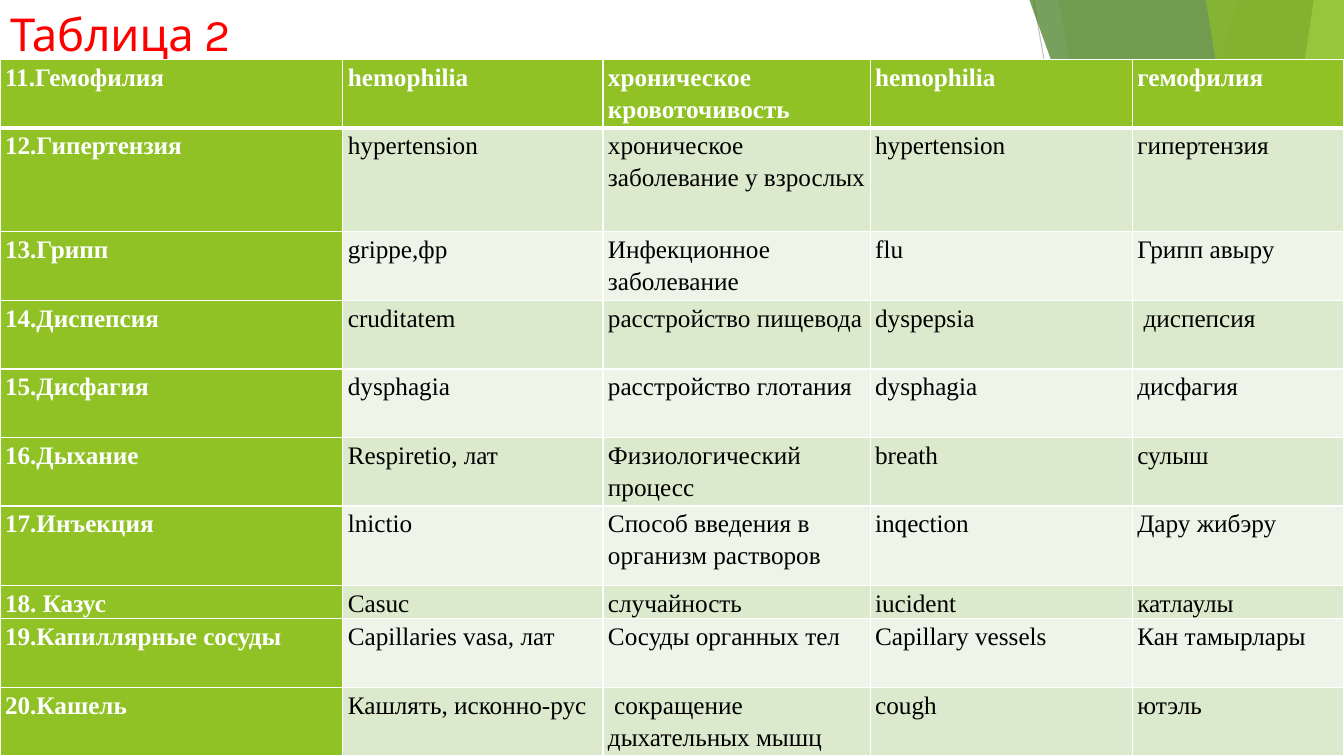
from lxml.etree import SubElement
from pptx import Presentation
from pptx.dml.color import RGBColor
from pptx.enum.shapes import MSO_CONNECTOR
from pptx.enum.text import MSO_ANCHOR, MSO_AUTO_SIZE, PP_ALIGN
from pptx.oxml.ns import qn
from pptx.util import Inches, Pt

COLORS = {
    "red": "FF0000",
    "white": "FFFFFF",
    "black": "000000",
    "line": "BFBFBF",
    "green": "90C226",
    "dark": "3F7819",
    "light": "C0E474",
    "band_odd": "DBE9CD",
    "band_even": "EEF4E8",
}
BODY_FONT = "Times New Roman"
COLUMN_WIDTHS = [3.4, 2.58, 2.65, 2.6, 2.1]
ROW_HEIGHTS = [0.68, 1.03, 0.68, 0.68, 0.68, 0.68, 0.79, 0.33, 0.68, 0.68]
TERMS = [
    ["11.Гемофилия", "hemophilia", "хроническое кровоточивость", "hemophilia", "гемофилия"],
    ["12.Гипертензия", "hypertension", "хроническое заболевание у взрослых", "hypertension", "гипертензия"],
    ["13.Грипп", "grippe,фр", "Инфекционное заболевание", "flu", "Грипп авыру"],
    ["14.Диспепсия", "cruditatem", "расстройство пищевода", "dyspepsia", " диспепсия"],
    ["15.Дисфагия", "dysphagia", "расстройство глотания", "dysphagia", "дисфагия"],
    ["16.Дыхание", "Respiretio, лат", "Физиологический процесс", "breath", "сулыш"],
    ["17.Инъекция", "lnictio", "Способ введения в организм растворов", "inqection", "Дару жибэру"],
    ["18. Казус", "Casuc", "случайность", "iucident", "катлаулы"],
    ["19.Капиллярные сосуды", "Capillaries vasa, лат", "Сосуды органных тел", "Capillary vessels", "Кан тамырлары"],
    ["20.Кашель", "Кашлять, исконно-рус", " сокращение дыхательных мышц", "cough", "ютэль"],
]
# Left edge of each facet at the top and bottom of the box, colour, opacity in percent
FACETS = [
    (2.24, 0, "green", 30),
    (0.46, 1.79, "green", 20),
    (0.17, 2.87, "dark", 70),
    (2.99, 1.88, "light", 70),
    (1.92, 3.14, "green", 65),
]


def color(name):
    return RGBColor.from_string(COLORS[name])


def add_facets(slide, left, top, width, height):
    """Translucent facets that share the right edge of the box."""
    line = slide.shapes.add_connector(
        MSO_CONNECTOR.STRAIGHT, Inches(left + 0.21), Inches(top),
        Inches(left + 1.54), Inches(top + height))
    line.line.color.rgb = color("line")
    line.line.width = Pt(0.75)
    SubElement(line._element.spPr, qn("a:effectLst"))

    right, bottom = left + width, top + height
    for top_offset, bottom_offset, fill, opacity in FACETS:
        builder = slide.shapes.build_freeform(Inches(left + top_offset), Inches(top))
        corners = [(right, top), (right, bottom), (left + bottom_offset, bottom)]
        builder.add_line_segments([(Inches(x), Inches(y)) for x, y in corners])
        facet = builder.convert_to_shape()
        facet.shadow.inherit = False
        facet.line.fill.background()
        facet.fill.solid()
        facet.fill.fore_color.rgb = color(fill)
        fill_color = facet._element.spPr.find(qn("a:solidFill"))[0]
        SubElement(fill_color, qn("a:alpha"), val=str(opacity * 1000))


def add_title(slide, left, top, width, height):
    title = slide.shapes.title
    title.left, title.top = Inches(left), Inches(top)
    title.width, title.height = Inches(width), Inches(height)
    text_frame = title.text_frame
    text_frame.text = "Таблица 2"
    text_frame.auto_size = MSO_AUTO_SIZE.NONE
    text_frame.vertical_anchor = MSO_ANCHOR.MIDDLE
    paragraph = text_frame.paragraphs[0]
    paragraph.alignment = PP_ALIGN.LEFT
    font = paragraph.runs[0].font
    font.name, font.size = "Karla", Pt(32.4)
    font.color.rgb = color("red")


def set_borders(cell, top_width, bottom_width):
    properties = cell._tc.get_or_add_tcPr()
    widths = {"a:lnL": 1, "a:lnR": 1, "a:lnT": top_width, "a:lnB": bottom_width}
    for tag, width in widths.items():
        border = SubElement(properties, qn(tag), w=str(Pt(width)))
        fill = SubElement(border, qn("a:solidFill"))
        SubElement(fill, qn("a:srgbClr"), val=COLORS["white"])


def format_cell(cell, row, column):
    is_heading = row == 0 or column == 0
    set_borders(cell, 3 if row == 1 else 1, 3 if row == 0 else 1)
    cell.fill.solid()
    band = "band_odd" if row % 2 else "band_even"
    cell.fill.fore_color.rgb = color("green" if is_heading else band)
    cell.margin_left = cell.margin_right = Inches(0.05)
    cell.margin_top = cell.margin_bottom = 0
    paragraph = cell.text_frame.paragraphs[0]
    paragraph.line_spacing = 1.15
    font = paragraph.runs[0].font
    font.name, font.size, font.bold = BODY_FONT, Pt(18), is_heading
    font.color.rgb = color("white" if is_heading else "black")


def add_terms_table(slide, left, top, width, height):
    table = slide.shapes.add_table(
        len(TERMS), len(COLUMN_WIDTHS),
        Inches(left), Inches(top), Inches(width), Inches(height)).table
    table.horz_banding = False
    for column, column_width in zip(table.columns, COLUMN_WIDTHS):
        column.width = Inches(column_width)
    for row, row_height in zip(table.rows, ROW_HEIGHTS):
        row.height = Inches(row_height)
    for row, terms in enumerate(TERMS):
        for column, term in enumerate(terms):
            cell = table.cell(row, column)
            cell.text_frame.text = term
            format_cell(cell, row, column)


def main():
    presentation = Presentation()
    presentation.slide_width, presentation.slide_height = Inches(13.33), Inches(7.5)
    slide = presentation.slides.add_slide(presentation.slide_layouts[5])
    add_facets(slide, 10.04, 0, 3.29, 7.5)
    add_title(slide, 0, 0, 9.4, 0.66)
    add_terms_table(slide, 0, 0.59, sum(COLUMN_WIDTHS), sum(ROW_HEIGHTS))
    presentation.save("out.pptx")


if __name__ == "__main__":
    main()
